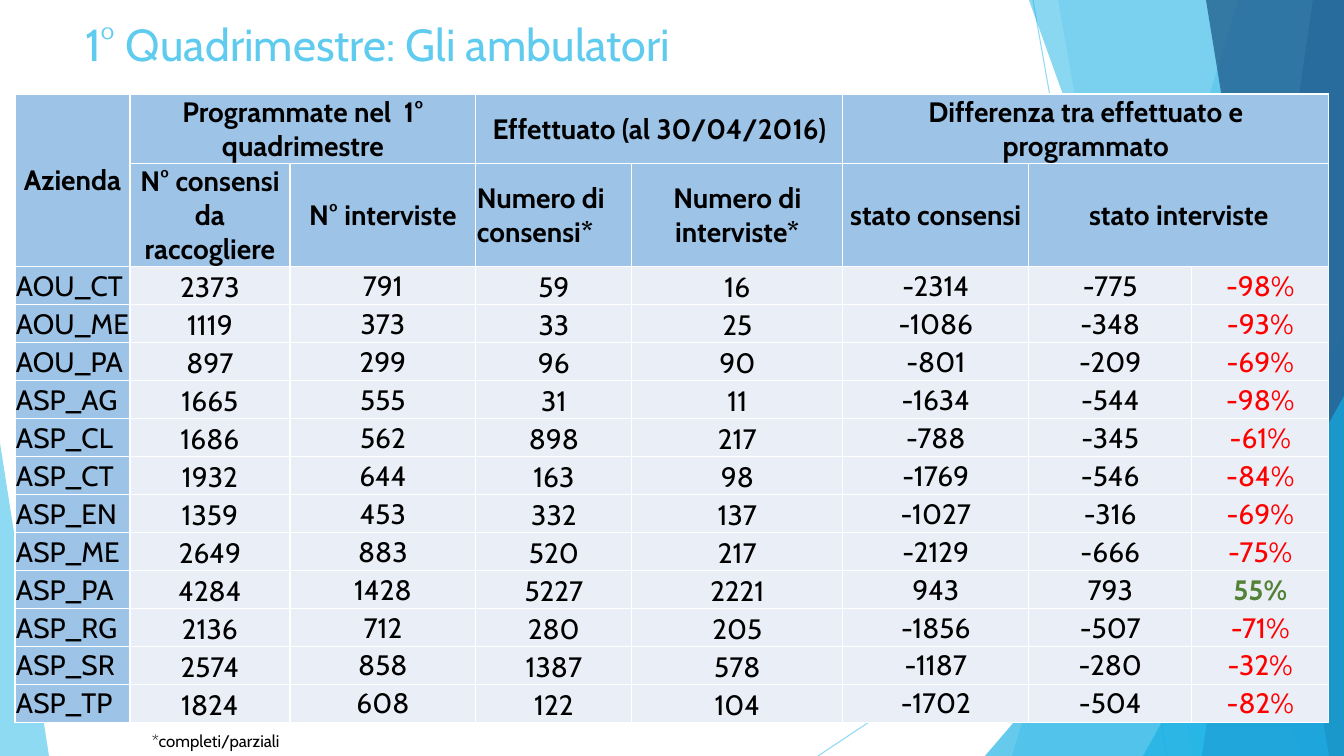
from pptx import Presentation
from pptx.dml.color import RGBColor
from pptx.enum.shapes import MSO_CONNECTOR
from pptx.enum.text import MSO_ANCHOR as ANCHOR, PP_ALIGN as ALIGN
from pptx.oxml import parse_xml
from pptx.oxml.ns import nsdecls, qn
from pptx.util import Pt
from lxml.etree import SubElement

TITLE = "1° Quadrimestre: Gli ambulatori"
FOOTNOTE = "*completi/parziali"
HEADERS = [
    (0, 0, 2, 1, "Azienda"),
    (0, 1, 1, 2, "Programmate nel  1° quadrimestre"),
    (0, 3, 1, 2, "Effettuato (al 30/04/2016)"),
    (0, 5, 1, 3, "Differenza tra effettuato e programmato"),
    (1, 1, 1, 1, "N° consensi da raccogliere"),
    (1, 2, 1, 1, "N° interviste"),
    (1, 3, 1, 1, "Numero di consensi*"),
    (1, 4, 1, 1, "Numero di interviste*"),
    (1, 5, 1, 1, "stato consensi"),
    (1, 6, 1, 2, "stato interviste"),
]
CLINICS = [
    ("AOU_CT", "2373", "791", "59", "16", "-2314", "-775", "-98%"),
    ("AOU_ME", "1119", "373", "33", "25", "-1086", "-348", "-93%"),
    ("AOU_PA", "897", "299", "96", "90", "-801", "-209", "-69%"),
    ("ASP_AG", "1665", "555", "31", "11", "-1634", "-544", "-98%"),
    ("ASP_CL", "1686", "562", "898", "217", "-788", "-345", "-61%"),
    ("ASP_CT", "1932", "644", "163", "98", "-1769", "-546", "-84%"),
    ("ASP_EN", "1359", "453", "332", "137", "-1027", "-316", "-69%"),
    ("ASP_ME", "2649", "883", "520", "217", "-2129", "-666", "-75%"),
    ("ASP_PA", "4284", "1428", "5227", "2221", "943", "793", "55%"),
    ("ASP_RG", "2136", "712", "280", "205", "-1856", "-507", "-71%"),
    ("ASP_SR", "2574", "858", "1387", "578", "-1187", "-280", "-32%"),
    ("ASP_TP", "1824", "608", "122", "104", "-1702", "-504", "-82%"),
]
COLUMN_WIDTHS = [115, 160, 186, 156, 211, 186, 163, 137]
ROW_HEIGHTS = [69, 99] + [38] * len(CLINICS)
BOTTOM_COLUMNS = (1, 3, 4)

RAYS = [(1033, 0, 1167, 756), (1344, 406, 818, 756)]
FACETS = [
    ("5FCBEF", 36, [(1238, 0), (1344, 0), (1344, 756), (1012, 756)]),
    ("5FCBEF", 20, [(1058, 0), (1344, 0), (1344, 756), (1192, 756)]),
    ("17B0E4", 66, [(985, 756), (1344, 336), (1344, 756)]),
    ("17B0E4", 50, [(1029, 0), (1344, 0), (1344, 756), (1301, 756)]),
    ("2E83C3", 70, [(1313, 0), (1344, 0), (1344, 756), (1202, 756)]),
    ("236292", 80, [(1206, 0), (1344, 0), (1344, 756), (1329, 756)]),
    ("17B0E4", 66, [(1143, 756), (1344, 396), (1344, 756)]),
    ("5FCBEF", 70, [(0, 756), (0, 443), (49, 756)]),
]
SKY, HEADER_BLUE, PALE = "5FCBEF", "9DC3E6", "EAEFF7"
BLACK, RED, GREEN = "000000", "FF0000", "548235"
SCALE = 12192000 / 1344


def px(length):
    return round(length * SCALE)


def rgb(code):
    return RGBColor.from_string(code)


def paint(fill, code, opacity=100):
    fill.solid()
    fill.fore_color.rgb = rgb(code)
    if opacity < 100:
        color = fill._xPr.find(".//" + qn("a:srgbClr"))
        SubElement(color, qn("a:alpha"), val=str(opacity * 1000))


def write(frame, text, size, code, bold=False, align=ALIGN.LEFT):
    paragraph = frame.paragraphs[0]
    paragraph.text = text
    paragraph.alignment = align
    font = paragraph.font
    font.name, font.size, font.bold = "Cabin", Pt(size), bold
    font.color.rgb = rgb(code)


def style_cell(cell, code):
    properties = cell._tc.get_or_add_tcPr()
    for side in ("lnL", "lnR", "lnT", "lnB"):
        properties.append(parse_xml(
            f'<a:{side} {nsdecls("a")} w="12700"><a:solidFill>'
            f'<a:srgbClr val="FFFFFF"/></a:solidFill></a:{side}>'))
    paint(cell.fill, code)
    cell.margin_left = cell.margin_right = cell.margin_top = px(1)
    cell.margin_bottom = 0
    cell.vertical_anchor = ANCHOR.MIDDLE


def draw_background(shapes):
    for x1, y1, x2, y2 in RAYS:
        ray = shapes.add_connector(MSO_CONNECTOR.STRAIGHT, px(x1), px(y1), px(x2), px(y2))
        ray.line.width = Pt(0.75)
        paint(ray.line.fill, SKY, 70)
        SubElement(ray._element.spPr, qn("a:effectLst"))
    for code, opacity, corners in FACETS:
        outline = shapes.build_freeform(*corners[0], scale=SCALE)
        outline.add_line_segments(corners[1:], close=True)
        facet = outline.convert_to_shape()
        facet.shadow.inherit = False
        facet.line.fill.background()
        paint(facet.fill, code, opacity)


def draw_table(shapes):
    table = shapes.add_table(len(ROW_HEIGHTS), len(COLUMN_WIDTHS), px(15), px(94),
                             px(sum(COLUMN_WIDTHS)), px(sum(ROW_HEIGHTS))).table
    table.first_row = table.horz_banding = False
    for column, width in zip(table.columns, COLUMN_WIDTHS):
        column.width = px(width)
    for row, height in zip(table.rows, ROW_HEIGHTS):
        row.height = px(height)
    for r in range(len(ROW_HEIGHTS)):
        for c in range(len(COLUMN_WIDTHS)):
            style_cell(table.cell(r, c), HEADER_BLUE if r < 2 or c == 0 else PALE)

    for r, c, height, width, label in HEADERS:
        header = table.cell(r, c)
        if height * width > 1:
            header.merge(table.cell(r + height - 1, c + width - 1))
        align = ALIGN.LEFT if (r, c) == (1, 3) else ALIGN.CENTER
        write(header.text_frame, label, 20, BLACK, True, align)

    for r, clinic in enumerate(CLINICS, 2):
        for c, value in enumerate(clinic):
            cell = table.cell(r, c)
            if c in BOTTOM_COLUMNS:
                cell.vertical_anchor = ANCHOR.BOTTOM
            positive = value.endswith("%") and not value.startswith("-")
            code = GREEN if positive else RED if value.endswith("%") else BLACK
            align = ALIGN.CENTER if c else ALIGN.LEFT
            write(cell.text_frame, value, 20, code, positive, align)


def main():
    deck = Presentation()
    deck.slide_width, deck.slide_height = px(1344), px(756)
    slide = deck.slides.add_slide(deck.slide_layouts[5])
    shapes = slide.shapes
    draw_background(shapes)

    title = shapes.title
    title.left, title.top, title.width, title.height = px(75), px(12), px(948), px(59)
    title.text_frame.vertical_anchor = ANCHOR.TOP
    write(title.text_frame, TITLE, 32, SKY)
    title.element.getparent().append(title.element)

    draw_table(shapes)
    footnote = shapes.add_textbox(px(142), px(726), px(158), px(30)).text_frame
    footnote.word_wrap = False
    write(footnote, FOOTNOTE, 12, BLACK)
    deck.save("out.pptx")


if __name__ == "__main__":
    main()
